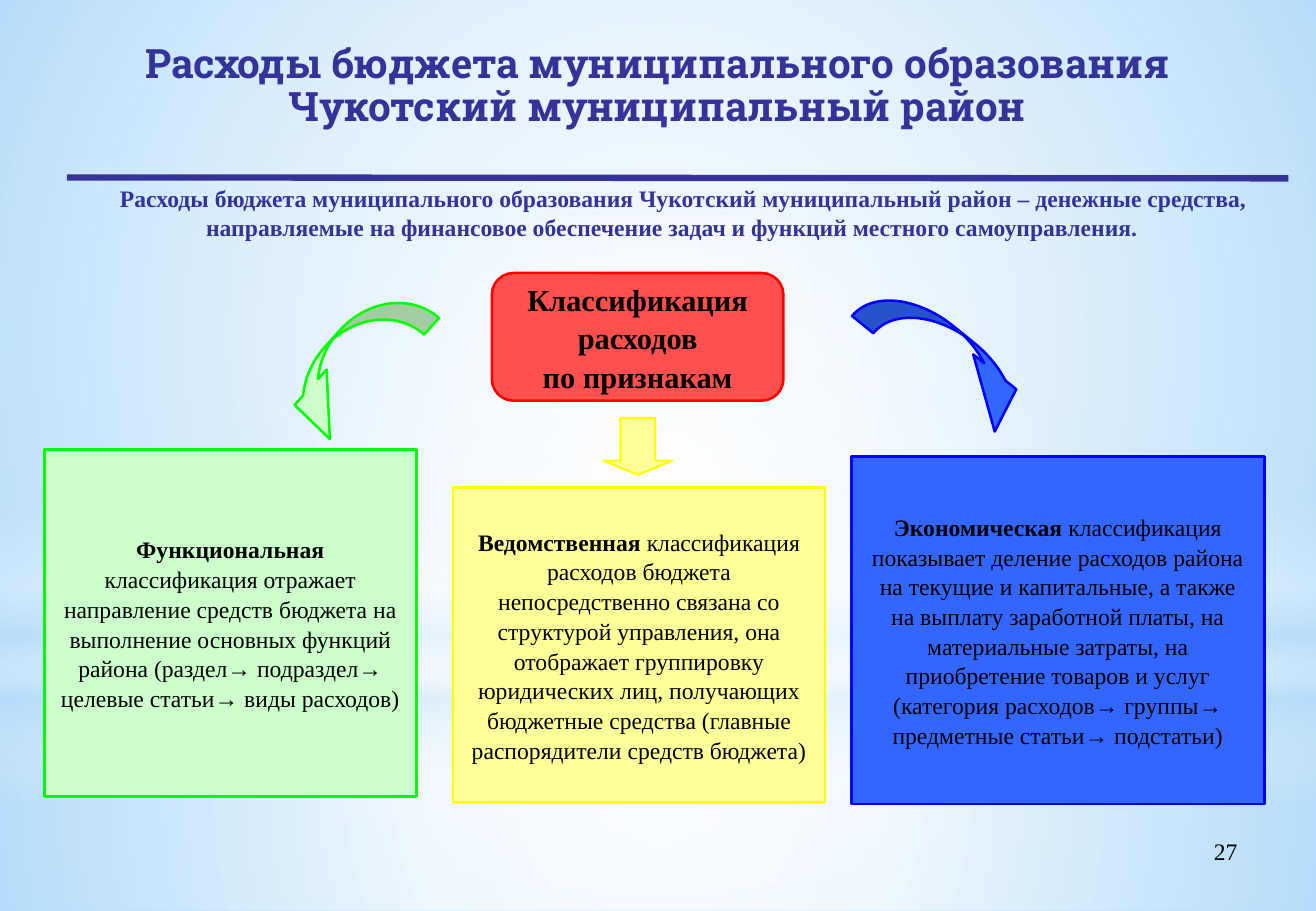
from lxml import etree
from pptx import Presentation
from pptx.dml.color import RGBColor
from pptx.enum.shapes import MSO_CONNECTOR, MSO_SHAPE
from pptx.enum.text import MSO_ANCHOR, PP_ALIGN
from pptx.oxml import parse_xml
from pptx.oxml.ns import nsdecls, qn
from pptx.util import Cm, Pt

INDIGO = "333399"
GREEN, LIME = "CCFFCC", "00FF00"
PALE_YELLOW, YELLOW = "FFFF99", "FFFF00"
AZURE, BLUE = "3366FF", "0000FF"
SERIF = "Times New Roman"


def rgb(value):
    return RGBColor.from_string(value)


def write(sp, paragraphs, size, color="000000", font=SERIF, align=PP_ALIGN.CENTER,
          anchor=MSO_ANCHOR.MIDDLE, margins=(0.25, 0.13), spacing=1.05):
    """Fill a shape with paragraphs, each a list of (text, bold) runs."""
    tf = sp.text_frame
    tf.word_wrap = True
    tf.vertical_anchor = anchor
    tf.margin_left = tf.margin_right = Cm(margins[0])
    tf.margin_top = tf.margin_bottom = Cm(margins[1])
    for i, runs in enumerate(paragraphs):
        p = tf.add_paragraph() if i else tf.paragraphs[0]
        p.alignment = align
        p.line_spacing = spacing
        for text, bold in runs:
            r = p.add_run()
            r.text = text
            r.font.size = Pt(size)
            r.font.name = font
            r.font.bold = bold
            r.font.color.rgb = rgb(color)


prs = Presentation()
prs.slide_width, prs.slide_height = Cm(27.53), Cm(19.05)
s = prs.slides.add_slide(prs.slide_layouts[6])
s.background.fill.solid()
s.background.fill.fore_color.rgb = rgb("B4DCFA")

# Backdrop glows: stops are (position %, colour, opacity %)
RADIAL = ('<a:path path="circle"><a:fillToRect l="50000" t="50000" r="50000" b="50000"/>'
          '</a:path>')
LINEAR = '<a:lin ang="5400000" scaled="0"/>'
glows = [
    (MSO_SHAPE.RECTANGLE, 14.17, 4.88, RADIAL,
     [(0, "FFFFFF", 91), (37, "FFFFFF", 76), (100, "B4DCFA", 79)]),
    (MSO_SHAPE.RECTANGLE, 0, 14.17, RADIAL,
     [(0, "FFFFFF", 89), (48, "FFFFFF", 62), (100, "B4DCFA", 79)]),
    (MSO_SHAPE.RECTANGLE, 10.46, 6.35, LINEAR,
     [(0, "FFFFFF", 0), (29, "FFFFFF", 30), (45, "B4DCFA", 40),
      (55, "FFFFFF", 26), (65, "B4DCFA", 60), (100, "FFFFFF", 0)]),
    (MSO_SHAPE.OVAL, 4.45, 14.17, RADIAL, [(0, "FFFFFF", 100), (56, "FFFFFF", 0)]),
]
for kind, top, height, direction, stops in glows:
    sp = s.shapes.add_shape(kind, 0, Cm(top), prs.slide_width, Cm(height))
    sp.shadow.inherit = False
    sp.line.fill.background()
    stop_xml = "".join(
        f'<a:gs pos="{pos * 1000}"><a:srgbClr val="{color}">'
        f'<a:alpha val="{opacity * 1000}"/></a:srgbClr></a:gs>'
        for pos, color, opacity in stops)
    sp.element.spPr.find(qn("a:prstGeom")).addnext(parse_xml(
        f'<a:gradFill {nsdecls("a")} rotWithShape="1"><a:gsLst>{stop_xml}</a:gsLst>'
        f'{direction}</a:gradFill>'))

# Page number, title and definition
number = s.shapes.add_textbox(Cm(19.71), Cm(17.35), Cm(6.43), Cm(1.32))
write(number, [[("27", False)]], 14, align=PP_ALIGN.RIGHT, anchor=MSO_ANCHOR.TOP)

title = s.shapes.add_textbox(Cm(1.37), Cm(0.51), Cm(24.77), Cm(2.62))
write(title, [[("Расходы бюджета муниципального образования Чукотский муниципальный район",
                True)]], 24, INDIGO, "Roboto Slab", spacing=0.9)

definition = s.shapes.add_textbox(Cm(1.68), Cm(3.68), Cm(24.77), Cm(1.8))
write(definition, [[("Расходы бюджета муниципального образования Чукотский муниципальный район "
                     "– денежные средства, направляемые на финансовое обеспечение задач и "
                     "функций местного самоуправления.", True)]],
      14, INDIGO, anchor=MSO_ANCHOR.TOP)
p = definition.text_frame.paragraphs[0]
p.space_before = Pt(4)
p._p.get_or_add_pPr().set("indent", str(Cm(0.48)))

rule = s.shapes.add_connector(MSO_CONNECTOR.STRAIGHT, Cm(1.4), Cm(3.71), Cm(26.95), Cm(3.73))
rule.line.color.rgb = rgb(INDIGO)
rule.line.width = Pt(3.75)
etree.SubElement(rule.element.spPr, qn("a:effectLst"))

# Classification diagram: kind, box, rotation, adjustments, fill, line, width, text
heading = [[("Классификация расходов", True)], [("по признакам", True)]]
functional = [[
    ("Функциональная", True),
    (" классификация отражает направление средств бюджета на выполнение основных функций "
     "района (раздел→ подраздел→ целевые статьи→ виды расходов)", False)]]
departmental = [[
    ("Ведомственная ", True),
    ("классификация расходов бюджета непосредственно связана со структурой управления, она "
     "отображает группировку юридических лиц, получающих бюджетные средства (главные "
     "распорядители средств бюджета)", False)]]
economic = [[
    ("Экономическая", True),
    (" классификация показывает деление расходов района на текущие и капитальные, а также на "
     "выплату заработной платы, на материальные затраты, на приобретение товаров и услуг "
     "(категория расходов→ группы→ предметные статьи→ подстатьи)", False)]]
diagram = [
    (MSO_SHAPE.ROUNDED_RECTANGLE, (10.29, 5.71, 6.1, 2.67), 0, [0.17],
     "FF5050", "FF0000", 1.5, heading),
    (MSO_SHAPE.RECTANGLE, (0.93, 9.4, 7.78, 7.26), 0, [], GREEN, LIME, 1.5, functional),
    (MSO_SHAPE.RECTANGLE, (9.48, 10.2, 7.78, 6.58), 0, [],
     PALE_YELLOW, YELLOW, 1.5, departmental),
    (MSO_SHAPE.RECTANGLE, (17.81, 9.55, 8.64, 7.26), 0, [], AZURE, BLUE, 1.5, economic),
    (MSO_SHAPE.CURVED_UP_ARROW, (5.41, 6.96, 3.91, 1.37), 132, [0.34, 0.73, 0.75],
     GREEN, LIME, 1.5, None),
    (MSO_SHAPE.CURVED_DOWN_ARROW, (17.7, 6.96, 4.42, 1.17), 39, [0.49, 0.99, 0.83],
     AZURE, BLUE, 1.5, None),
    (MSO_SHAPE.DOWN_ARROW, (12.62, 8.74, 1.45, 1.19), 0, [0.5, 0.25],
     PALE_YELLOW, YELLOW, 1.25, None),
]
for kind, box, rotation, adjustments, fill, line, width, text in diagram:
    sp = s.shapes.add_shape(kind, *map(Cm, box))
    sp.shadow.inherit = False
    sp.rotation = rotation
    for i, value in enumerate(adjustments):
        sp.adjustments[i] = value
    sp.fill.solid()
    sp.fill.fore_color.rgb = rgb(fill)
    sp.line.color.rgb = rgb(line)
    sp.line.width = Pt(width)
    if text is heading:
        write(sp, text, 18, margins=(0.36, 0.13))
    elif text:
        write(sp, text, 14, margins=(0.3, 0))

prs.save("out.pptx")
